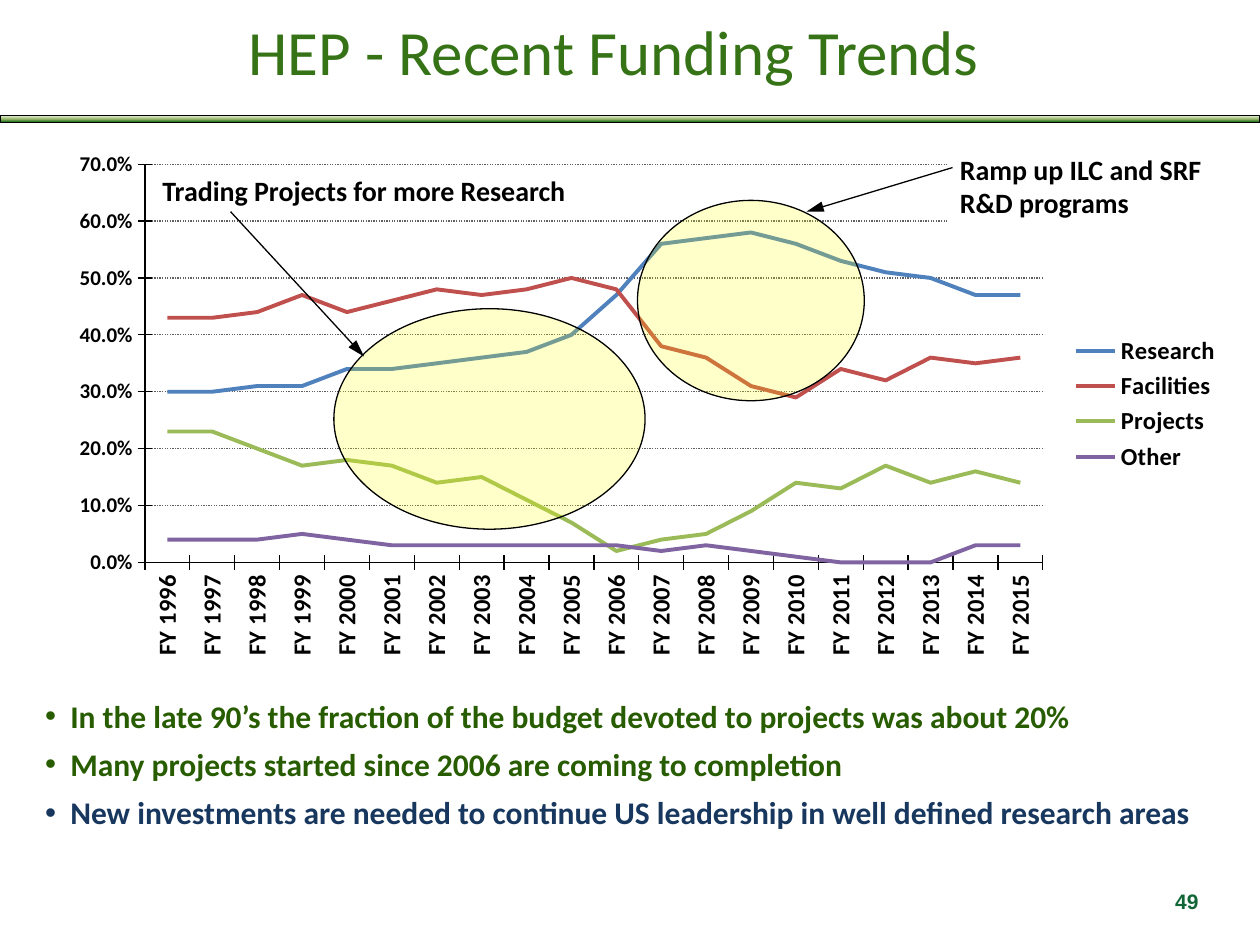
import pptx
import pptx.chart.data
import pptx.dml.color
import pptx.enum.chart
import pptx.enum.dml
import pptx.enum.shapes
import pptx.enum.text
import pptx.oxml
import pptx.oxml.ns
import pptx.util

Inches, Pt = pptx.util.Inches, pptx.util.Pt
RGB = pptx.dml.color.RGBColor
ALIGN = pptx.enum.text.PP_ALIGN
MIDDLE = pptx.enum.text.MSO_ANCHOR.MIDDLE
SHAPE = pptx.enum.shapes.MSO_SHAPE
qn = pptx.oxml.ns.qn

BLACK, WHITE = RGB(0, 0, 0), RGB(255, 255, 255)
YELLOW = RGB(0xFF, 0xFF, 0x00)
GRID_GREY = RGB(0x60, 0x60, 0x60)
TITLE_GREEN = RGB(0x36, 0x73, 0x17)
BULLET_GREEN = RGB(0x28, 0x5C, 0x00)
NAVY = RGB(0x17, 0x37, 0x5E)
NUMBER_GREEN = RGB(0x10, 0x66, 0x36)
RULE_STOPS = [(0, "DDEBCF"), (50, "9CB86E"), (100, "156B13")]

YEARS = range(1996, 2016)
SHARES = [  # name, colour, percent of budget for each year
    ("Research", RGB(0x4F, 0x81, 0xBD),
     [30, 30, 31, 31, 34, 34, 35, 36, 37, 40, 47, 56, 57, 58, 56, 53, 51, 50, 47, 47]),
    ("Facilities", RGB(0xC0, 0x50, 0x4D),
     [43, 43, 44, 47, 44, 46, 48, 47, 48, 50, 48, 38, 36, 31, 29, 34, 32, 36, 35, 36]),
    ("Projects", RGB(0x9B, 0xBB, 0x59),
     [23, 23, 20, 17, 18, 17, 14, 15, 11, 7, 2, 4, 5, 9, 14, 13, 17, 14, 16, 14]),
    ("Other", RGB(0x80, 0x64, 0xA2),
     [4, 4, 4, 5, 4, 3, 3, 3, 3, 3, 3, 2, 3, 2, 1, 0, 0, 0, 3, 3]),
]
PLOT_AREA = {"x": 0.075, "y": 0.044, "w": 0.763, "h": 0.758}  # shares of the chart
BULLETS = [
    ("In the late 90’s the fraction of the budget devoted to projects was about 20%", BULLET_GREEN),
    ("Many projects started since 2006 are coming to completion", BULLET_GREEN),
    ("New investments are needed to continue US leadership in well defined research areas", NAVY),
]
HIGHLIGHTS = [(2.65, 2.45, 2.47, 1.75), (5.06, 1.59, 1.8, 1.59)]
NOTES = [
    ("Trading Projects for more Research", (1.19, 1.33, 3.81, 0.37), None),
    ("Ramp up ILC and SRF R&D programs", (7.52, 1.16, 2.4, 0.64), WHITE),
]
ARROWS = [((7.56, 1.33), (6.4, 1.68)), ((1.83, 1.68), (2.89, 2.83))]


def box(values):
    return [Inches(v) for v in values]


def style(font, size, color=BLACK, bold=True, name="Calibri"):
    font.size, font.bold, font.name = Pt(size), bold, name
    font.color.rgb = color


def outline(line, width=0.75):
    line.color.rgb = BLACK
    line.width = Pt(width)


def add_text(s, at, paragraphs, size, align=ALIGN.LEFT, bullet=False, anchor=None, **font):
    """paragraphs is a list of (text, colour)."""
    sp = s.shapes.add_textbox(*box(at))
    tf = sp.text_frame
    tf.word_wrap = True
    if anchor is not None:
        tf.vertical_anchor = anchor
    tf.text = "\n".join(text for text, _ in paragraphs)
    for p, (_, color) in zip(tf.paragraphs, paragraphs):
        p.alignment = align
        if bullet:
            p.space_after = Pt(6)
            pPr = p._p.get_or_add_pPr()
            pPr.set("marL", str(Inches(0.2)))
            pPr.set("indent", str(Inches(-0.2)))
            pPr.append(pPr.makeelement(qn("a:buFont"), {"typeface": "Arial"}))
            pPr.append(pPr.makeelement(qn("a:buChar"), {"char": "•"}))
        style(p.runs[0].font, size, color, **font)
    return sp


def add_funding_chart(s):
    data = pptx.chart.data.CategoryChartData(number_format="0.0%")
    data.categories = [f"FY {year}" for year in YEARS]
    for name, _, percents in SHARES:
        data.add_series(name, [v / 100 for v in percents])
    chart = s.shapes.add_chart(pptx.enum.chart.XL_CHART_TYPE.LINE,
                               *box((0.45, 1.12, 9.34, 4.17)), data).chart
    style(chart.font, 10, bold=False)
    chart.has_title = False
    chart.has_legend = True
    chart.legend.position = pptx.enum.chart.XL_LEGEND_POSITION.RIGHT
    chart.legend.include_in_layout = False
    style(chart.legend.font, 14)

    for axis, size in ((chart.category_axis, 14), (chart.value_axis, 12)):
        style(axis.tick_labels.font, size)
        outline(axis.format.line)
        axis.major_tick_mark = pptx.enum.chart.XL_TICK_MARK.CROSS
    turned = chart.category_axis._element.find(qn("c:txPr")).find(qn("a:bodyPr"))
    turned.set("rot", "-5400000")
    turned.set("vert", "horz")

    values = chart.value_axis
    values.minimum_scale, values.maximum_scale, values.major_unit = 0, 0.7, 0.1
    values.tick_labels.number_format = "0.0%"
    values.tick_labels.number_format_is_linked = False
    grid = values.major_gridlines.format.line
    grid.color.rgb, grid.width = GRID_GREY, Pt(0.75)
    grid.dash_style = pptx.enum.dml.MSO_LINE.ROUND_DOT

    chart.plots[0].vary_by_categories = False
    for series, (_, color, _) in zip(chart.plots[0].series, SHARES):
        series.smooth = False
        series.marker.style = pptx.enum.chart.XL_MARKER_STYLE.NONE
        series.format.line.color.rgb = color
        series.format.line.width = Pt(2.25)

    plot = chart._chartSpace.chart.plotArea
    for old in plot.findall(qn("c:layout")):
        plot.remove(old)
    layout = plot.makeelement(qn("c:layout"), {})
    manual = layout.makeelement(qn("c:manualLayout"), {})
    layout.append(manual)
    settings = {"layoutTarget": "inner", "xMode": "edge", "yMode": "edge", **PLOT_AREA}
    for tag, value in settings.items():
        manual.append(manual.makeelement(qn(f"c:{tag}"), {"val": str(value)}))
    plot.insert(0, layout)


def add_highlight(s, at):
    sp = s.shapes.add_shape(SHAPE.OVAL, *box(at))
    sp.shadow.inherit = False
    sp.fill.solid()
    sp.fill.fore_color.rgb = YELLOW
    color = sp._element.spPr.find(qn("a:solidFill"))[0]
    color.append(color.makeelement(qn("a:alpha"), {"val": "21000"}))
    outline(sp.line)


def add_arrow(s, start, end):
    arrow = s.shapes.add_connector(pptx.enum.shapes.MSO_CONNECTOR.STRAIGHT, *box(start + end))
    outline(arrow.line)
    ln = arrow.line._get_or_add_ln()
    ln.append(ln.makeelement(qn("a:tailEnd"), {"type": "triangle", "w": "med", "len": "lg"}))
    spPr = arrow._element.spPr
    spPr.append(spPr.makeelement(qn("a:effectLst"), {}))


def add_title_rule(s):
    sp = s.shapes.add_shape(SHAPE.RECTANGLE, *box((0, 0.92, 10, 0.05)))
    sp.shadow.inherit = False
    sp.fill.gradient()
    sp.fill.gradient_angle = 270
    stops = sp._element.spPr.find(qn("a:gradFill")).find(qn("a:gsLst"))
    for old in list(stops):
        stops.remove(old)
    for percent, color in RULE_STOPS:
        stop = stops.makeelement(qn("a:gs"), {"pos": str(percent * 1000)})
        stop.append(stop.makeelement(qn("a:srgbClr"), {"val": color}))
        stops.append(stop)
    outline(sp.line, 0.5)


def main():
    prs = pptx.Presentation()
    prs.slide_width, prs.slide_height = Inches(10), Inches(7.5)
    s = prs.slides.add_slide(prs.slide_layouts[6])

    add_funding_chart(s)
    add_text(s, (1.06, 0, 7.62, 0.79), [("HEP - Recent Funding Trends", TITLE_GREEN)], 36,
             ALIGN.CENTER, anchor=MIDDLE, bold=False)
    add_text(s, (0.26, 5.48, 9.4, 1.18), BULLETS, 18, bullet=True)
    for highlight, (text, at, fill) in zip(HIGHLIGHTS, NOTES):
        add_highlight(s, highlight)
        note = add_text(s, at, [(text, BLACK)], 16)
        if fill is not None:
            note.fill.solid()
            note.fill.fore_color.rgb = fill
    for start, end in ARROWS:
        add_arrow(s, start, end)
    add_title_rule(s)
    add_text(s, (9.09, 6.95, 0.52, 0.4), [("49", NUMBER_GREEN)], 12, ALIGN.RIGHT,
             anchor=MIDDLE, name="Arial")
    prs.save("out.pptx")


if __name__ == "__main__":
    main()
